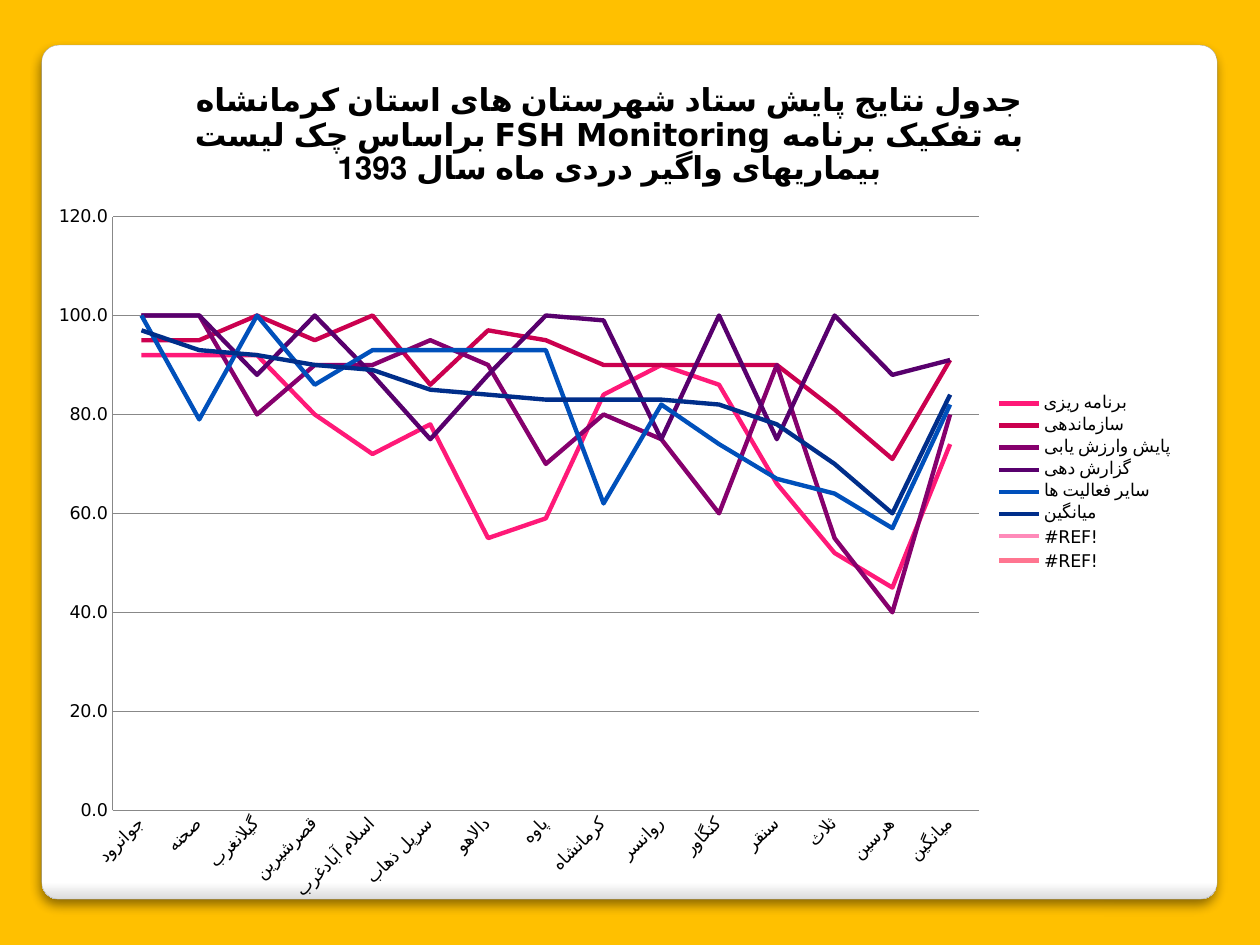
"""Build a slide with a line chart of monitoring results by county."""
from lxml.etree import SubElement
from pptx import Presentation
from pptx.chart.data import CategoryChartData
from pptx.dml.color import RGBColor
from pptx.enum.chart import XL_CHART_TYPE, XL_LEGEND_POSITION, XL_TICK_MARK
from pptx.enum.shapes import MSO_SHAPE
from pptx.oxml import parse_xml
from pptx.oxml.ns import nsdecls, qn
from pptx.util import Cm, Pt

COLORS = {
    "background": "FFC000", "panel": "FFFFFF", "panel_edge": "DADADA",
    "panel_line": "A4A4A4", "shadow": "000000", "text": "000000", "grid": "888888",
}
TITLE = ("جدول نتایج پایش ستاد شهرستان های استان کرمانشاه براساس چک لیست "
         "FSH Monitoring به تفکیک برنامه بیماریهای واگیر دردی ماه سال 1393")
COUNTIES = ["جوانرود", "صحنه", "گیلانغرب", "قصرشیرین", "اسلام آبادغرب", "سرپل ذهاب",
            "دالاهو", "پاوه", "کرمانشاه", "روانسر", "کنگاور", "سنقر", "ثلاث",
            "هرسین", "میانگین"]
SERIES = [
    ("برنامه ریزی", "FF1978", [92, 92, 92, 80, 72, 78, 55, 59, 84, 90, 86, 66, 52, 45, 74]),
    ("سازماندهی", "CB004F", [95, 95, 100, 95, 100, 86, 97, 95, 90, 90, 90, 90, 81, 71, 91]),
    ("پایش وارزش یابی", "86006D", [100, 100, 80, 90, 90, 95, 90, 70, 80, 75, 60, 90, 55, 40, 80]),
    ("گزارش دهی", "58006D", [100, 100, 88, 100, 88, 75, 88, 100, 99, 75, 100, 75, 100, 88, 91]),
    ("سایر فعالیت ها", "0050BB", [100, 79, 100, 86, 93, 93, 93, 93, 62, 82, 74, 67, 64, 57, 82]),
    ("میانگین", "002E8A", [97, 93, 92, 90, 89, 85, 84, 83, 83, 83, 82, 78, 70, 60, 84]),
    ("#REF!", "FF8AB9", [1]),
    ("#REF!", "FF7590", [1]),
]


class SlideBuilder:
    """Hold the style and the current slide."""

    def __init__(self, slide, font_name="DejaVu Sans"):
        self.slide = slide
        self.font_name = font_name

    def color(self, name):
        """Return a named or hex colour."""
        return RGBColor.from_string(COLORS.get(name, name))

    def style_font(self, font, size, bold=False):
        """Apply the slide's type style."""
        font.name, font.size, font.bold = self.font_name, Pt(size), bold
        font.color.rgb = self.color("text")

    def style_line(self, line, color, width):
        """Set the colour and width of a line."""
        line.color.rgb = self.color(color)
        line.width = Pt(width)

    def add_background(self):
        """Fill the slide background."""
        fill = self.slide.background.fill
        fill.solid()
        fill.fore_color.rgb = self.color("background")

    def add_panel(self, left, top, width, height):
        """Add the rounded panel with a shaded lower edge and a soft shadow."""
        panel = self.slide.shapes.add_shape(
            MSO_SHAPE.ROUNDED_RECTANGLE, Cm(left), Cm(top), Cm(width), Cm(height))
        panel.adjustments[0] = 0.02
        panel.fill.gradient()
        panel.fill.gradient_angle = 270
        stops = zip(panel.fill.gradient_stops, ("panel", "panel_edge"), (0.98, 1))
        for stop, color, position in stops:
            stop.color.rgb = self.color(color)
            stop.position = position
        self.style_line(panel.line, "panel_line", 0.16)
        panel.shadow.inherit = False
        effects = panel.element.spPr.find(qn("a:effectLst"))
        effects.append(parse_xml(
            f'<a:outerShdw {nsdecls("a")} blurRad="{Pt(6)}" dist="{Pt(4)}" dir="5400000">'
            f'<a:srgbClr val="{COLORS["shadow"]}"><a:alpha val="45000"/></a:srgbClr>'
            '</a:outerShdw>'))

    def add_line_chart(self, left, top, width, height):
        """Add the line chart with its title, axes and legend."""
        data = CategoryChartData(number_format="0.0")
        data.categories = COUNTIES
        for name, _, values in SERIES:
            data.add_series(name, values)
        chart = self.slide.shapes.add_chart(
            XL_CHART_TYPE.LINE, Cm(left), Cm(top), Cm(width), Cm(height), data).chart
        self.style_font(chart.font, 10)
        for series, (_, color, _) in zip(chart.plots[0].series, SERIES):
            series.smooth = False
            self.style_line(series.format.line, color, 2.5)
        self.format_title(chart)
        self.format_axes(chart)
        self.place_plot(chart, x=0.07, y=0.19, w=0.75, h=0.69)
        chart.has_legend = True
        chart.legend.position = XL_LEGEND_POSITION.RIGHT
        chart.legend.include_in_layout = False
        self.style_font(chart.legend.font, 10)

    def format_title(self, chart):
        """Write the right-to-left chart title."""
        chart.has_title = True
        chart.chart_title.include_in_layout = False
        paragraph = chart.chart_title.text_frame.paragraphs[0]
        paragraph.text = TITLE
        self.style_font(paragraph.font, 18, bold=True)
        self.style_font(paragraph.runs[0].font, 18, bold=True)
        paragraph.font._element.getparent().set("rtl", "1")

    def format_axes(self, chart):
        """Format both axes and the gridlines."""
        for axis in (chart.category_axis, chart.value_axis):
            axis.major_tick_mark = axis.minor_tick_mark = XL_TICK_MARK.NONE
            self.style_line(axis.format.line, "grid", 0.75)
            self.style_font(axis.tick_labels.font, 10)
        labels = chart.category_axis._element.find(qn("c:txPr"))
        labels.find(qn("a:bodyPr")).set("rot", "-2700000")
        axis = chart.value_axis
        axis.minimum_scale, axis.maximum_scale, axis.major_unit = 0, 120, 20
        axis.tick_labels.number_format = "0.0"
        axis.tick_labels.number_format_is_linked = False
        axis.has_major_gridlines = True
        self.style_line(axis.major_gridlines.format.line, "grid", 0.75)

    def place_plot(self, chart, **bounds):
        """Fix the inner plot area as fractions of the chart."""
        plot_area = chart._chartSpace.chart.plotArea
        for old_layout in plot_area.findall(qn("c:layout")):
            plot_area.remove(old_layout)
        layout = parse_xml(f'<c:layout {nsdecls("c")}><c:manualLayout/></c:layout>')
        settings = {"layoutTarget": "inner", "xMode": "edge", "yMode": "edge", **bounds}
        for name, value in settings.items():
            SubElement(layout[0], qn(f"c:{name}")).set("val", str(value))
        plot_area.insert(0, layout)


def main():
    """Build and save the presentation."""
    presentation = Presentation()
    presentation.slide_width, presentation.slide_height = Cm(25.4), Cm(19.05)
    builder = SlideBuilder(presentation.slides.add_slide(presentation.slide_layouts[6]))
    builder.add_background()
    builder.add_panel(0.84, 0.91, 23.7, 17.22)
    builder.add_line_chart(0.64, 1.07, 23.29, 17.35)
    presentation.save("out.pptx")


if __name__ == "__main__":
    main()
